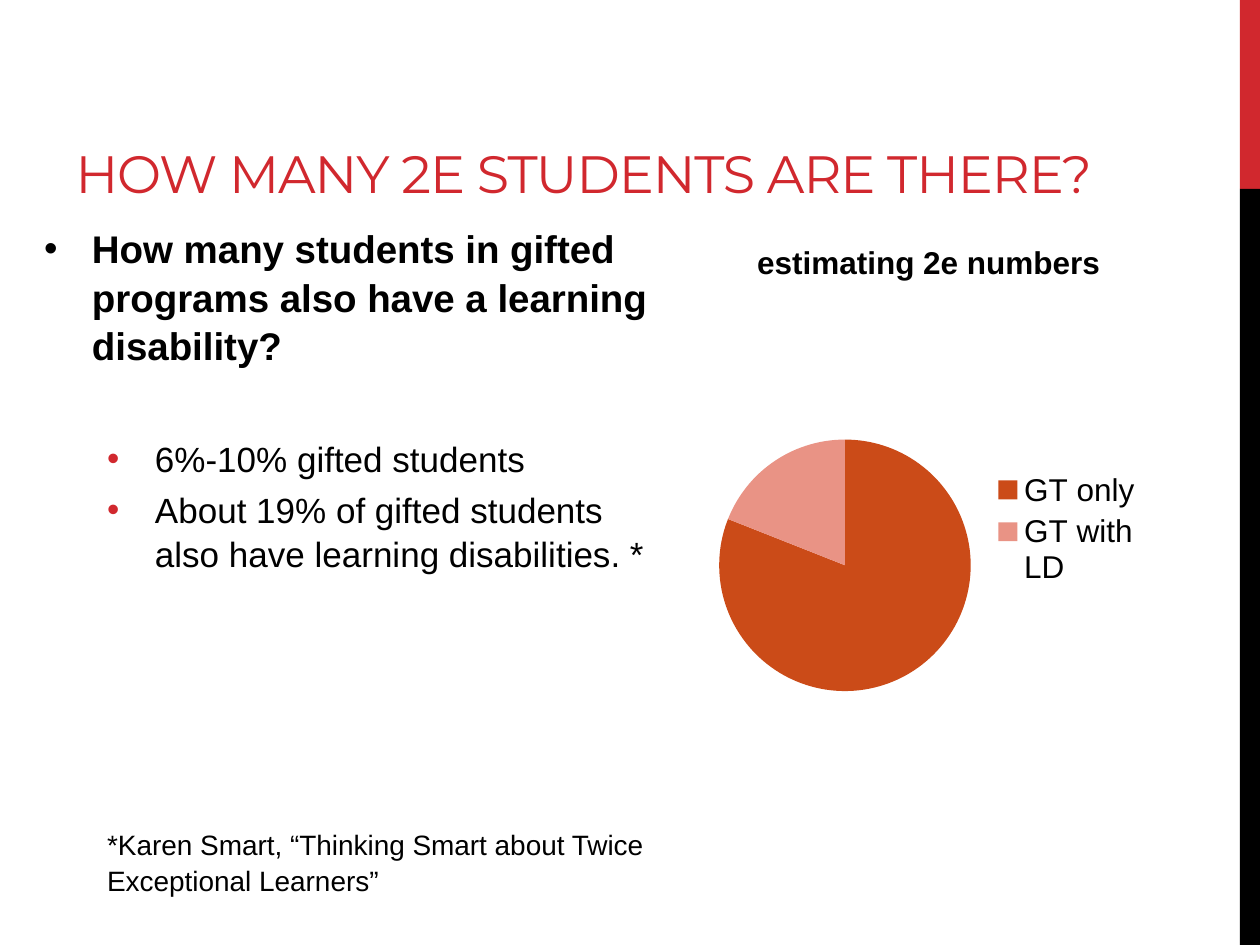
import pptx
import pptx.chart.data
import pptx.dml.color
import pptx.enum.chart
import pptx.enum.shapes
import pptx.enum.text
import pptx.oxml
import pptx.oxml.ns
import pptx.util

Inches = pptx.util.Inches
Pt = pptx.util.Pt
RGBColor = pptx.dml.color.RGBColor

RED = RGBColor(0xD1, 0x28, 0x2E)
BLACK = RGBColor(0x00, 0x00, 0x00)
ORANGE = RGBColor(0xCB, 0x4B, 0x18)
PINK = RGBColor(0xE9, 0x93, 0x85)


def place(s, box):
    s.left, s.top, s.width, s.height = (Inches(v) for v in box)


def set_bullet(p, left, hang, color=None):
    """Set the indent, and a round bullet when a colour is given."""
    pPr = p._p.get_or_add_pPr()
    pPr.set("marL", str(Inches(left)))
    pPr.set("indent", str(-Inches(hang)))
    ns = pptx.oxml.ns.nsdecls("a")
    if color is None:
        parts = [f"<a:buNone {ns}/>"]
    else:
        parts = [
            f'<a:buClr {ns}><a:srgbClr val="{color}"/></a:buClr>',
            f'<a:buFont {ns} typeface="Arial"/>',
            f'<a:buChar {ns} char="•"/>',
        ]
    for part in parts:
        pPr.append(pptx.oxml.parse_xml(part))


def add_run(p, text, size, color, font="Arial", bold=False):
    r = p.add_run()
    r.text = text
    r.font.size = Pt(size)
    r.font.name = font
    r.font.bold = bold
    r.font.color.rgb = color
    return r


def add_side_bar(slide, box):
    left, top, width, height = box
    split = height / 5
    for y, h, color in ((top, split, RED), (top + split, height - split, BLACK)):
        s = slide.shapes.add_shape(
            pptx.enum.shapes.MSO_SHAPE.RECTANGLE,
            Inches(left), Inches(y), Inches(width), Inches(h))
        s.shadow.inherit = False
        s.fill.solid()
        s.fill.fore_color.rgb = color
        s.line.fill.background()


def fill_title(slide, box):
    s = slide.shapes.title
    place(s, box)
    tf = s.text_frame
    tf.auto_size = pptx.enum.text.MSO_AUTO_SIZE.NONE
    tf.vertical_anchor = pptx.enum.text.MSO_ANCHOR.BOTTOM
    p = tf.paragraphs[0]
    p.alignment = pptx.enum.text.PP_ALIGN.LEFT
    r = add_run(p, "HOW MANY 2E STUDENTS ARE THERE?", 30, RED, "Montserrat")
    r.font._element.set("spc", "-60")


def fill_body(slide, box):
    s = slide.placeholders[1]
    place(s, box)
    tf = s.text_frame
    tf.auto_size = pptx.enum.text.MSO_AUTO_SIZE.NONE
    tf.vertical_anchor = pptx.enum.text.MSO_ANCHOR.TOP
    # text, level, size, bold, space before, left, hanging, bullet colour
    items = [
        ("How many students in gifted programs also have a learning disability?",
         0, 22, True, 0, 0.38, 0.38, BLACK),
        ("6%-10% gifted students", 1, 20, False, 38, 0.88, 0.38, RED),
        ("About 19% of gifted students also have learning disabilities. *",
         1, 20, False, 4, 0.88, 0.38, RED),
        ("*Karen Smart, “Thinking Smart about Twice Exceptional Learners”",
         1, 16, False, 144, 0.5, 0, None),
    ]
    for i, (text, level, size, bold, before, left, hang, color) in enumerate(items):
        p = tf.paragraphs[0] if i == 0 else tf.add_paragraph()
        p.level = level
        p.space_before = Pt(before)
        p.space_after = Pt(0)
        p.line_spacing = 1.05
        set_bullet(p, left, hang, color)
        add_run(p, text, size, BLACK, bold=bold)


def add_pie(slide, box):
    name = "estimating 2e numbers"
    data = pptx.chart.data.CategoryChartData()
    data.categories = ["GT only", "GT with LD"]
    data.add_series(name, (81, 19))
    chart = slide.shapes.add_chart(
        pptx.enum.chart.XL_CHART_TYPE.PIE, *(Inches(v) for v in box), data).chart
    chart.font.name = "Arial"
    chart.font.size = Pt(18)
    chart.font.color.rgb = BLACK

    # Title and legend
    chart.has_title = True
    add_run(chart.chart_title.text_frame.paragraphs[0], name, 18, BLACK, bold=True)
    chart.chart_title.include_in_layout = False
    chart.has_legend = True
    chart.legend.position = pptx.enum.chart.XL_LEGEND_POSITION.RIGHT
    chart.legend.include_in_layout = False

    # Slices
    plot = chart.plots[0]
    plot.vary_by_categories = True
    for i, color in enumerate((ORANGE, PINK)):
        fill = plot.series[0].points[i].format.fill
        fill.solid()
        fill.fore_color.rgb = color


def main():
    prs = pptx.Presentation()
    prs.slide_width, prs.slide_height = Inches(10), Inches(7.5)
    slide = prs.slides.add_slide(prs.slide_layouts[1])
    add_side_bar(slide, (9.84, 0, 0.16, 7.5))
    fill_title(slide, (0.5, 0.17, 9.17, 1.5))
    fill_body(slide, (0.25, 1.72, 5.13, 3.53))
    add_pie(slide, (5.57, 1.72, 3.6, 4.95))
    prs.save("out.pptx")


if __name__ == "__main__":
    main()
